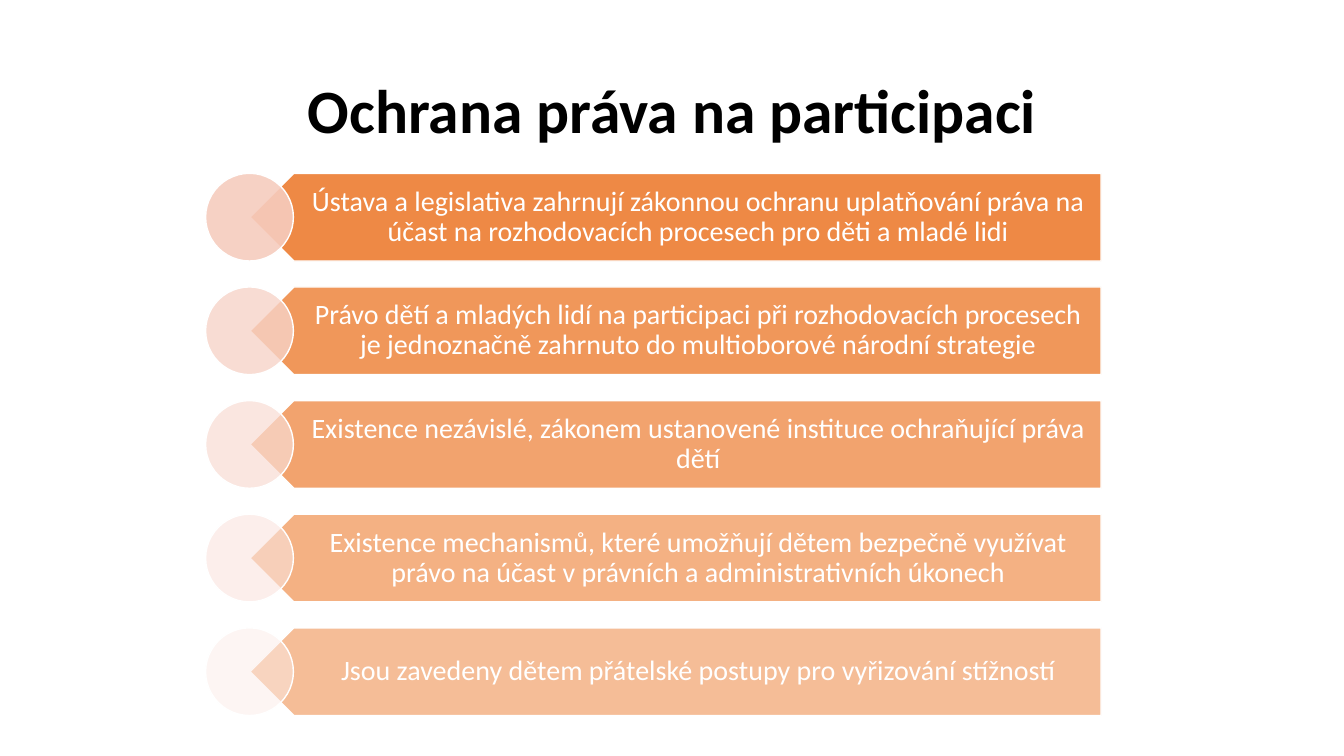
from dataclasses import dataclass

from lxml.etree import SubElement
from pptx import Presentation
from pptx.dml.color import RGBColor
from pptx.enum.shapes import MSO_SHAPE
from pptx.enum.text import MSO_ANCHOR, MSO_AUTO_SIZE, PP_ALIGN
from pptx.oxml.ns import qn
from pptx.util import Inches, Pt


@dataclass(frozen=True)
class Theme:
    font: str = "Calibri"
    title_size: int = 44
    body_size: int = 20
    line_width: int = 1
    line_spacing: float = 0.9
    ink: str = "000000"
    paper: str = "FFFFFF"
    bar: str = "ED7D31"
    circles: tuple = ("F6CCBE", "F7D4C9", "F9DCD4", "FAE4DE", "FCECE8")


class Page:
    def __init__(self, deck, theme):
        self.deck = deck
        self.theme = theme
        self.slide = deck.slides.add_slide(deck.slide_layouts[5])

    def across(self, percent):
        return round(self.deck.slide_width * percent / 100)

    def down(self, percent):
        return round(self.deck.slide_height * percent / 100)

    def frame(self, left, top, width, height):
        return self.across(left), self.down(top), self.across(width), self.down(height)

    def set_text(self, box, text, size, color, bold=False):
        frame = box.text_frame
        frame.word_wrap = True
        frame.auto_size = MSO_AUTO_SIZE.NONE
        frame.vertical_anchor = MSO_ANCHOR.MIDDLE
        frame.text = text
        para = frame.paragraphs[0]
        para.alignment = PP_ALIGN.CENTER
        para.line_spacing = self.theme.line_spacing
        para.space_before = Pt(0)
        para.font.name = self.theme.font
        para.font.size = Pt(size)
        para.font.bold = bold
        para.font.color.rgb = RGBColor.from_string(color)

    def title(self, text, *place):
        box = self.slide.shapes.title
        box.left, box.top, box.width, box.height = self.frame(*place)
        self.set_text(box, text, self.theme.title_size, self.theme.ink, bold=True)

    def shape(self, kind, color, opacity, *place, rotation=0):
        shape = self.slide.shapes.add_shape(kind, *self.frame(*place))
        shape.rotation = rotation
        shape.shadow.inherit = False
        shape.fill.solid()
        shape.fill.fore_color.rgb = RGBColor.from_string(color)
        tint = shape.element.spPr.find(qn("a:solidFill"))[0]
        SubElement(tint, qn("a:alpha"), val=str(opacity * 1000))
        shape.line.color.rgb = RGBColor.from_string(self.theme.paper)
        shape.line.width = Pt(self.theme.line_width)

    def label(self, text, *place):
        box = self.slide.shapes.add_textbox(*self.frame(*place))
        frame = box.text_frame
        frame.margin_left, frame.margin_right = self.across(2.85), self.across(1.2)
        frame.margin_top = frame.margin_bottom = self.down(1.07)
        self.set_text(box, text, self.theme.body_size, self.theme.paper)


SAFEGUARDS = (
    "Ústava a legislativa zahrnují zákonnou ochranu uplatňování práva na účast na rozhodovacích procesech pro děti a mladé lidi",
    "Právo dětí a mladých lidí na participaci při rozhodovacích procesech je jednoznačně zahrnuto do multioborové národní strategie",
    "Existence nezávislé, zákonem ustanovené instituce ochraňující práva dětí",
    "Existence mechanismů, které umožňují dětem bezpečně využívat právo na účast v právních a administrativních úkonech",
    "Jsou zavedeny dětem přátelské postupy pro vyřizování stížností",
)
FIRST_ROW, ROW_STEP, ROW_HEIGHT = 22.93, 15.03, 11.6


def main():
    deck = Presentation()
    deck.slide_width, deck.slide_height = Inches(13.33), Inches(7.5)
    theme = Theme()
    page = Page(deck, theme)
    page.title("Ochrana práva na participaci", 6.9, 5.33, 86.27, 19.33)
    for row, (text, circle) in enumerate(zip(SAFEGUARDS, theme.circles)):
        top = FIRST_ROW + row * ROW_STEP
        opacity = 90 - 10 * row
        page.shape(MSO_SHAPE.PENTAGON, theme.bar, opacity,
                   18.6, top, 63.32, ROW_HEIGHT, rotation=180)
        page.label(text, 20.26, top, 61.74, ROW_HEIGHT)
        page.shape(MSO_SHAPE.OVAL, circle, opacity, 15.3, top, 6.53, ROW_HEIGHT)
    deck.save("out.pptx")


if __name__ == "__main__":
    main()
